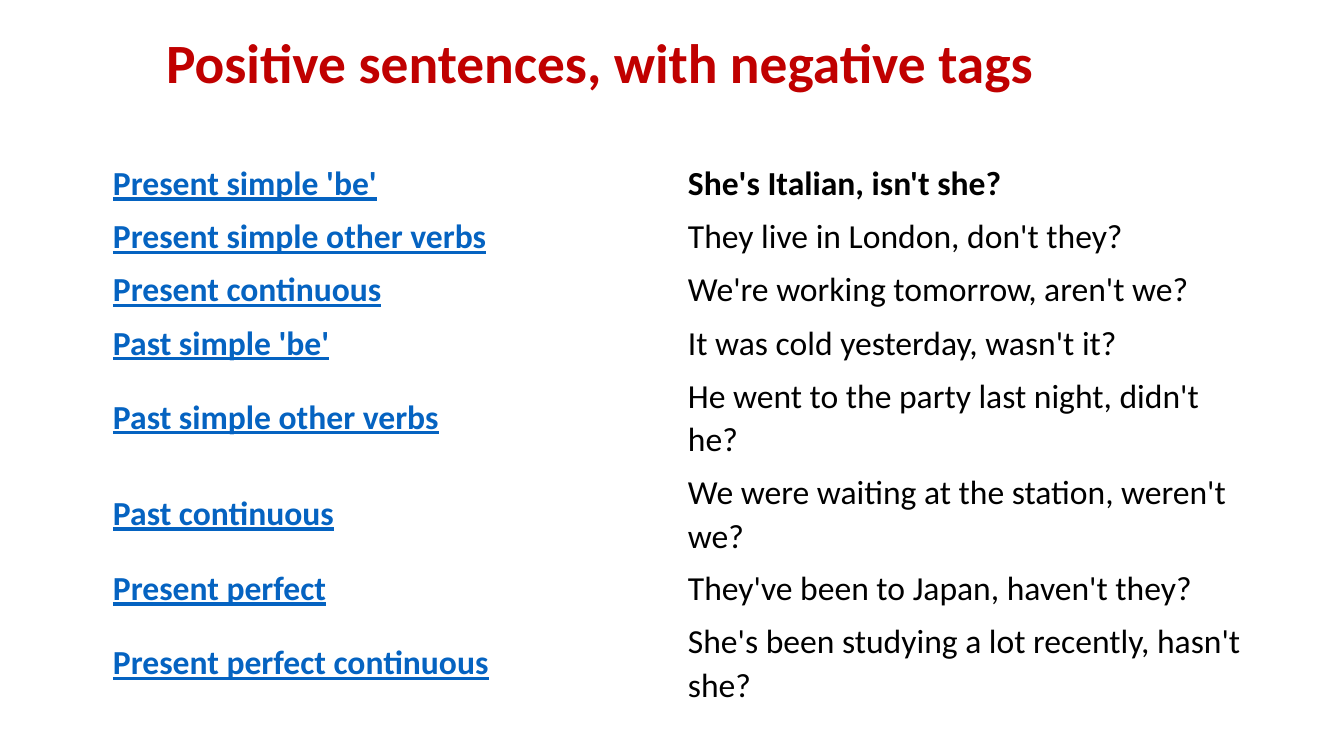
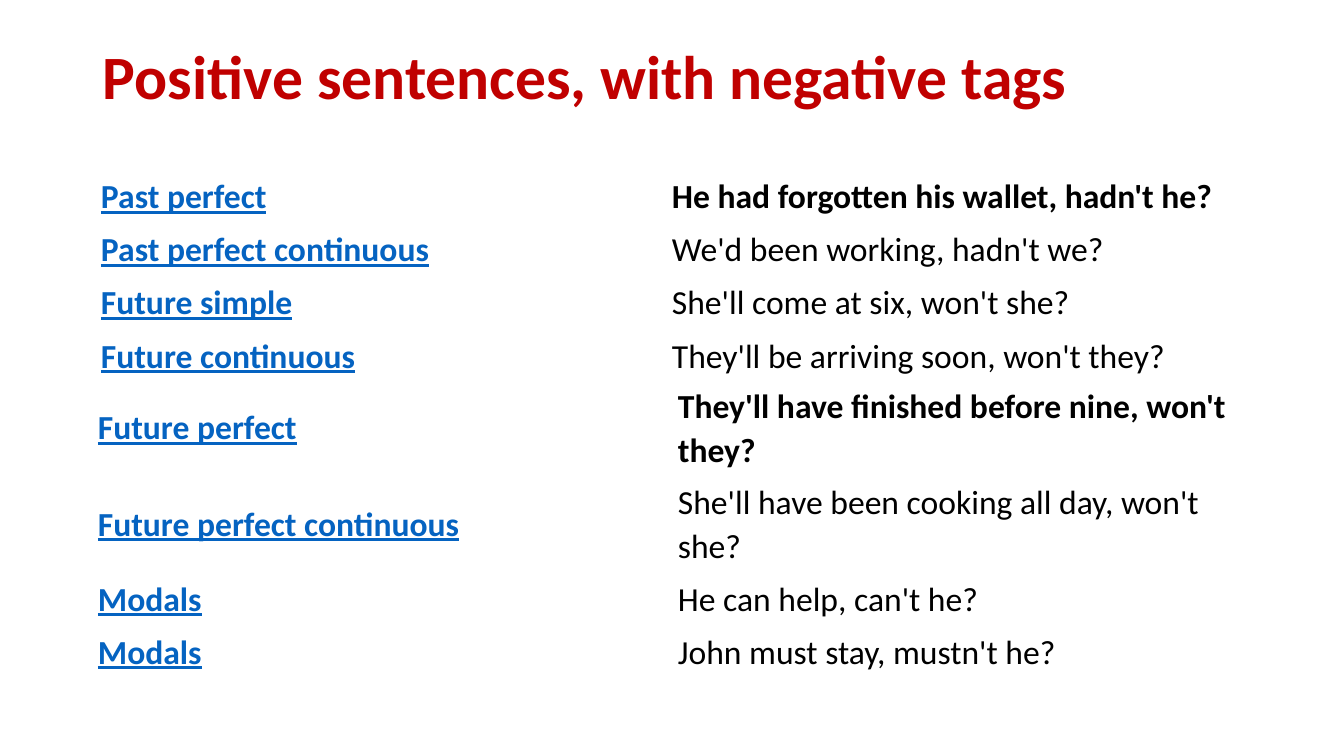
from pptx import Presentation
from pptx.dml.color import RGBColor as RGB
from pptx.enum.text import MSO_ANCHOR as Anchor
from pptx.util import Emu, Pt


def px(n):
    return Emu(round(n * 12192000 / 1344))


def color(code):
    return RGB.from_string(code)


def apply(item, style):
    for key, value in style.items():
        setattr(item, key, value)


class Deck:
    RED, BLUE, BLACK, WHITE = "C00000", "0563C1", "000000", "FFFFFF"
    FONT = "Calibri"
    TITLE = "Positive sentences, with negative tags"
    PAD = 5
    ROW = 46

    def __init__(self):
        self.prs = Presentation()
        apply(self.prs, {"slide_width": px(1344), "slide_height": px(756)})
        self.slide = None

    def page(self):
        self.slide = self.prs.slides.add_slide(self.prs.slide_layouts[6])

    def label(self, para, text, size, code, bold, under=False):
        run = para.add_run()
        run.text = text
        apply(run.font, {"name": self.FONT, "size": Pt(size),
                         "bold": bold, "underline": under})
        run.font.color.rgb = color(code)

    def title(self, left, top, height, size):
        box = self.slide.shapes.add_textbox(px(left), px(top), px(1159), px(height))
        frame = box.text_frame
        apply(frame, {"word_wrap": True, "vertical_anchor": Anchor.MIDDLE,
                      "margin_left": px(10), "margin_right": px(10),
                      "margin_top": 0, "margin_bottom": 0})
        para = frame.paragraphs[0]
        para.line_spacing = 0.9
        self.label(para, self.TITLE, size, self.RED, True)

    def cell(self, cell, text, code, bold, under):
        cell.fill.solid()
        cell.fill.fore_color.rgb = color(self.WHITE)
        sides = ("left", "right", "top", "bottom")
        apply(cell, {f"margin_{side}": px(self.PAD) for side in sides})
        cell.vertical_anchor = Anchor.MIDDLE
        para = cell.text_frame.paragraphs[0]
        apply(para, {"line_spacing": 1.07, "space_after": Pt(8)})
        self.label(para, text, 24, code, bold, under)

    def table(self, left, top, widths, rows):
        frame = self.slide.shapes.add_table(
            len(rows), len(widths), px(left), px(top),
            px(sum(widths)), px(self.ROW * len(rows)))
        table = frame.table
        apply(table, {"first_row": False, "horz_banding": False})
        for col, width in zip(table.columns, widths):
            col.width = px(width)
        for i, (tense, sample) in enumerate(rows):
            self.cell(table.cell(i, 0), tense, self.BLUE, True, True)
            self.cell(table.cell(i, 1), sample, self.BLACK, i == 0, False)


PAST = [
    ("Present simple 'be'", "She's Italian, isn't she?"),
    ("Present simple other verbs", "They live in London, don't they?"),
    ("Present continuous", "We're working tomorrow, aren't we?"),
    ("Past simple 'be'", "It was cold yesterday, wasn't it?"),
    ("Past simple other verbs", "He went to the party last night, didn't he?"),
    ("Past continuous", "We were waiting at the station, weren't we?"),
    ("Present perfect", "They've been to Japan, haven't they?"),
    ("Present perfect continuous", "She's been studying a lot recently, hasn't she?"),
]
FUTURE = [
    ("Past perfect", "He had forgotten his wallet, hadn't he?"),
    ("Past perfect continuous", "We'd been working, hadn't we?"),
    ("Future simple", "She'll come at six, won't she?"),
    ("Future continuous", "They'll be arriving soon, won't they?"),
]
MODAL = [
    ("Future perfect", "They'll have finished before nine, won't they?"),
    ("Future perfect continuous", "She'll have been cooking all day, won't she?"),
    ("Modals", "He can help, can't he?"),
    ("Modals", "John must stay, mustn't he?"),
]


def main():
    deck = Deck()
    deck.page()
    deck.title(156, 35, 61, 39.6)
    deck.table(108, 156, (575, 575), PAST)
    deck.page()
    deck.title(93, 46, 68, 44)
    deck.table(93, 379, (580, 580), MODAL)
    deck.table(96, 169, (571, 575), FUTURE)
    deck.prs.save("out.pptx")


if __name__ == "__main__":
    main()
